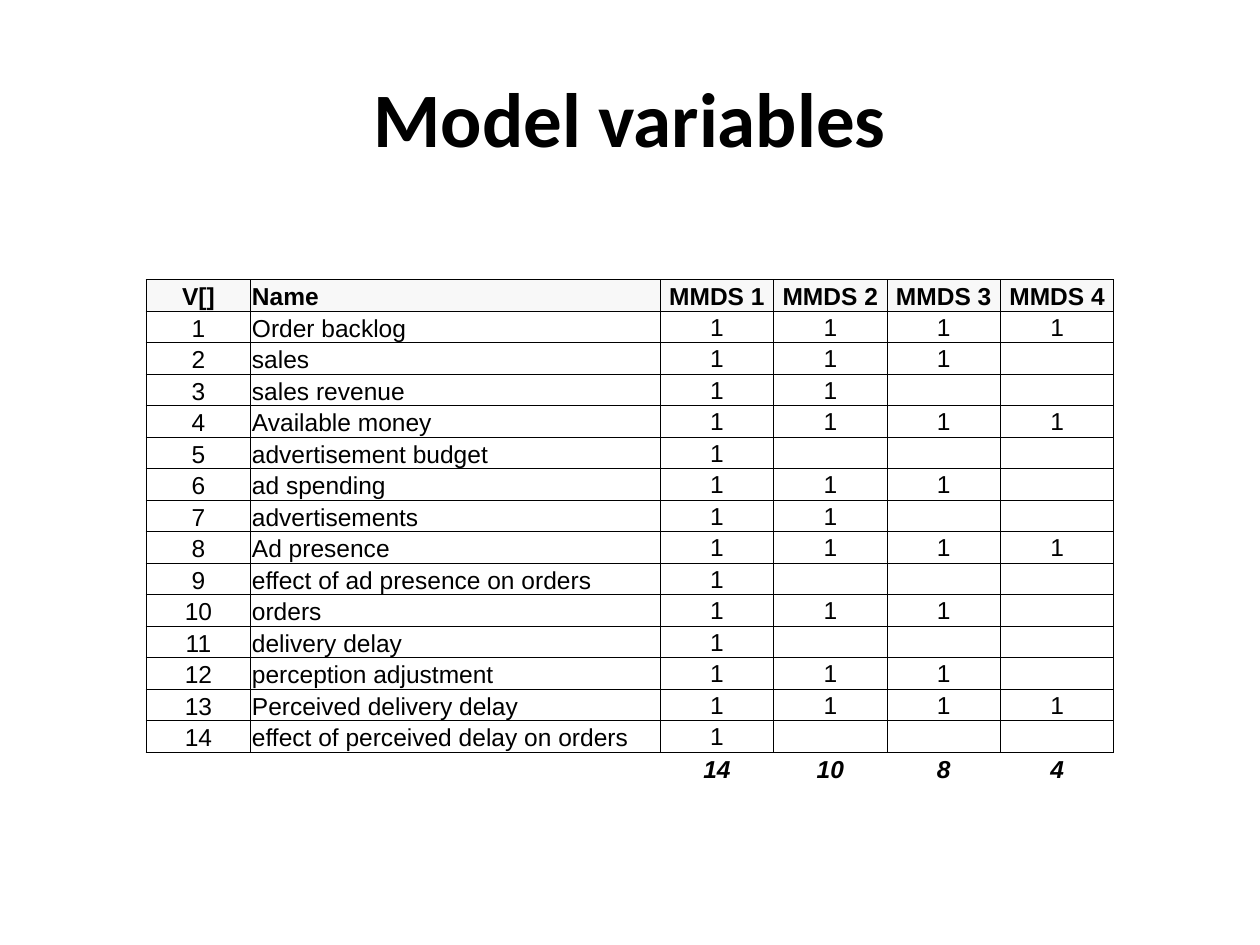
from lxml import etree
from pptx import Presentation
from pptx.dml.color import RGBColor
from pptx.enum.text import MSO_ANCHOR as Anchor, PP_ALIGN as Align
from pptx.oxml.ns import qn
from pptx.util import Inches, Pt

BLACK = RGBColor(0x00, 0x00, 0x00)
WHITE = RGBColor(0xFF, 0xFF, 0xFF)
GREY = RGBColor(0xF8, 0xF8, 0xF8)

MODELS = 4
WIDTHS = [0.83, 3.25] + [0.9] * MODELS
ROW_H = 0.25
ITEMS = [
    ("Order backlog", 4),
    ("sales", 3),
    ("sales revenue", 2),
    ("Available money", 4),
    ("advertisement budget", 1),
    ("ad spending", 3),
    ("advertisements", 2),
    ("Ad presence", 4),
    ("effect of ad presence on orders", 1),
    ("orders", 3),
    ("delivery delay", 1),
    ("perception adjustment", 3),
    ("Perceived delivery delay", 4),
    ("effect of perceived delay on orders", 1),
]


def style_run(run, face, size, bold=False, italic=False):
    """Set the font of a run in black."""
    font = run.font
    font.name, font.size = face, Pt(size)
    font.bold, font.italic = bold, italic
    font.color.rgb = BLACK


def add_title(slide, text, left, top, width, height):
    """Place the centred slide title in its box."""
    box = slide.shapes.add_textbox(Inches(left), Inches(top), Inches(width), Inches(height))
    frame = box.text_frame
    frame.word_wrap = True
    frame.vertical_anchor = Anchor.MIDDLE
    frame.text = text
    para = frame.paragraphs[0]
    para.alignment = Align.CENTER
    style_run(para.runs[0], "Calibri", 44, bold=True)


def set_edges(cell, drawn):
    """Draw thin lines on the named cell sides and clear the others."""
    props = cell._tc.get_or_add_tcPr()
    for place, side in enumerate("LRTB"):
        line = etree.Element(qn(f"a:ln{side}"), w=str(Pt(0.5)))
        props.insert(place, line)
        if side in drawn:
            fill = etree.SubElement(line, qn("a:solidFill"))
            etree.SubElement(fill, qn("a:srgbClr"), val=str(BLACK))
        else:
            etree.SubElement(line, qn("a:noFill"))


def fill_cell(cell, text, fill, align, anchor, edges, bold, italic):
    """Write one table cell with its fill, text style and edges."""
    cell.fill.solid()
    cell.fill.fore_color.rgb = fill
    cell.margin_left = cell.margin_right = cell.margin_top = Inches(0.01)
    cell.margin_bottom = 0
    cell.vertical_anchor = anchor
    cell.text_frame.text = text
    para = cell.text_frame.paragraphs[0]
    para.alignment = align
    for run in para.runs:
        style_run(run, "Arial", 14, bold, italic)
    if not text:
        etree.SubElement(para._p, qn("a:endParaRPr"), sz="1400")
    set_edges(cell, edges)


def table_rows():
    """Return the header, variable and total rows as text."""
    models = range(1, MODELS + 1)
    head = ["V[]", "Name"] + [f"MMDS {m}" for m in models]
    body = [
        [str(num), name] + ["1" if m <= count else "" for m in models]
        for num, (name, count) in enumerate(ITEMS, 1)
    ]
    sums = [str(sum(count >= m for _, count in ITEMS)) for m in models]
    return [head, *body, ["", ""] + sums]


def add_grid(slide, left, top):
    """Place the table of variables and the models that use them."""
    rows = table_rows()
    last = len(rows) - 1
    frame = slide.shapes.add_table(
        len(rows), len(WIDTHS), Inches(left), Inches(top),
        Inches(sum(WIDTHS)), Inches(ROW_H * len(rows)),
    )
    table = frame.table
    table.first_row = table.horz_banding = False
    for col, width in zip(table.columns, WIDTHS):
        col.width = Inches(width)
    for r, row in enumerate(rows):
        table.rows[r].height = Inches(ROW_H)
        for c, text in enumerate(row):
            mark = 0 < r < last and c > 1
            fill_cell(
                table.cell(r, c), text,
                fill=GREY if r == 0 else WHITE,
                align=Align.LEFT if c == 1 else Align.CENTER,
                anchor=Anchor.MIDDLE if mark else Anchor.BOTTOM,
                edges="T" if r == last else "LRTB",
                bold=r in (0, last),
                italic=r == last,
            )


def main():
    """Build and save the slide."""
    deck = Presentation()
    deck.slide_width, deck.slide_height = Inches(10), Inches(7.5)
    slide = deck.slides.add_slide(deck.slide_layouts[6])
    add_title(slide, "Model variables", 0.5, 0.3, 9, 1.25)
    add_grid(slide, 1.16, 2.22)
    deck.save("out.pptx")


if __name__ == "__main__":
    main()
